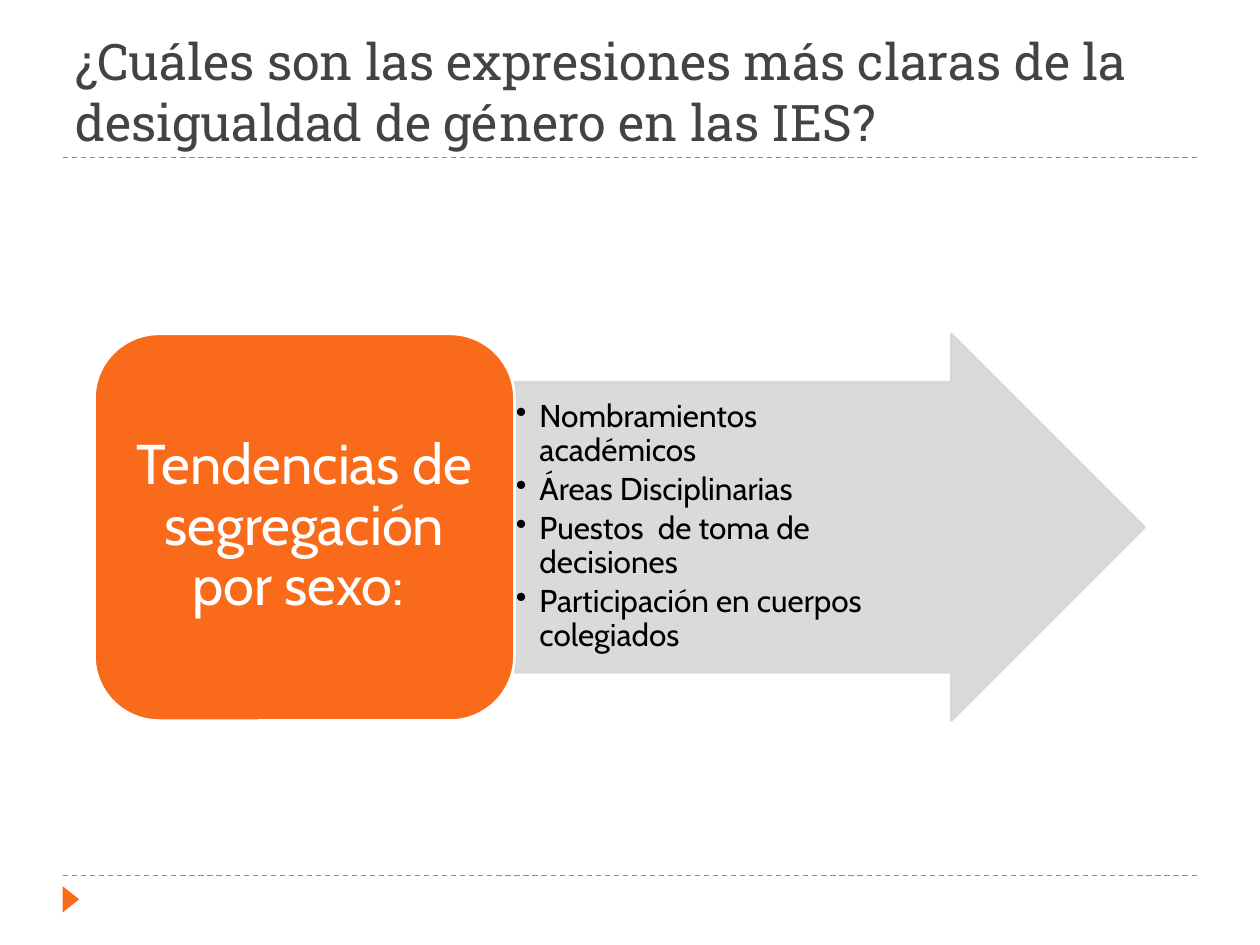
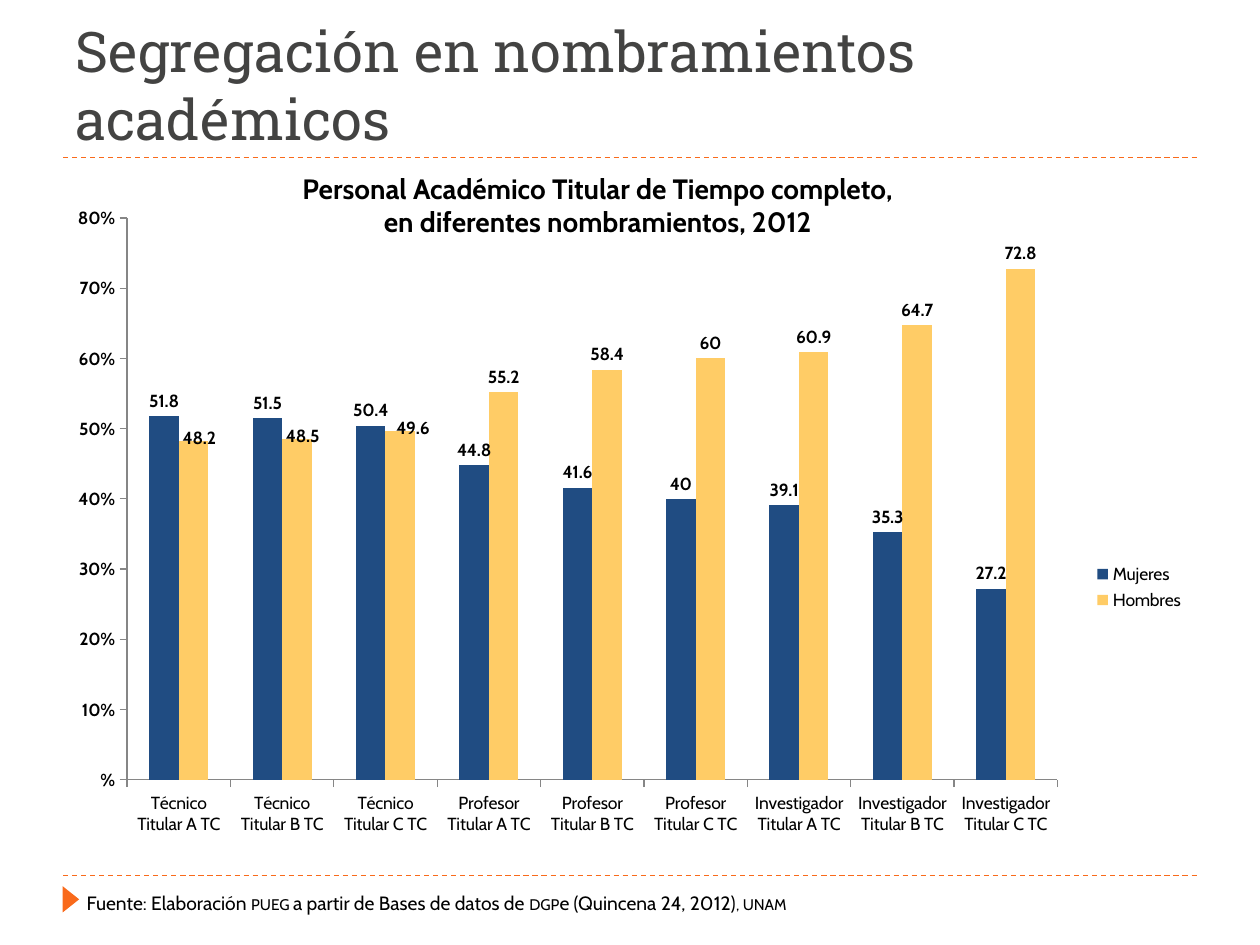
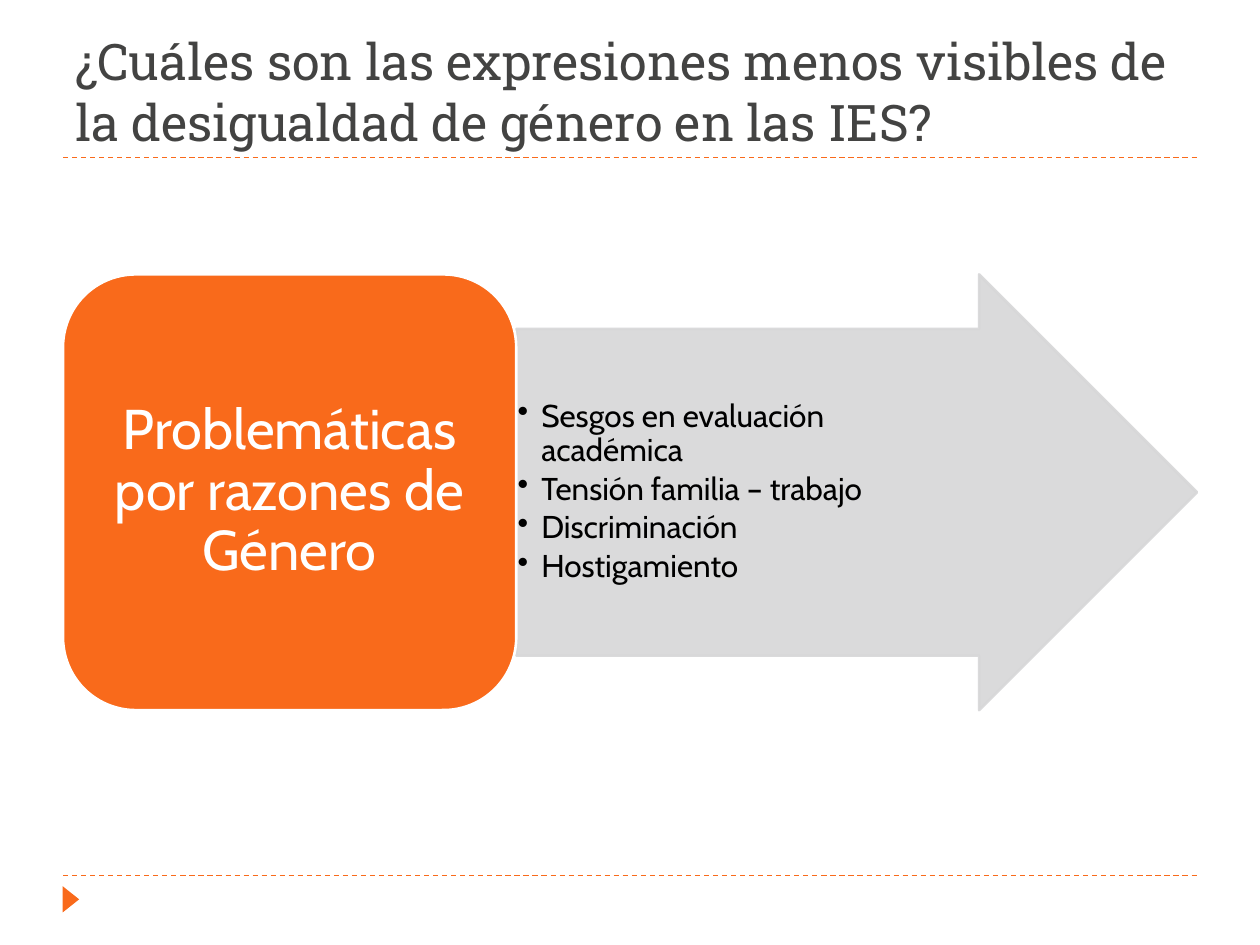
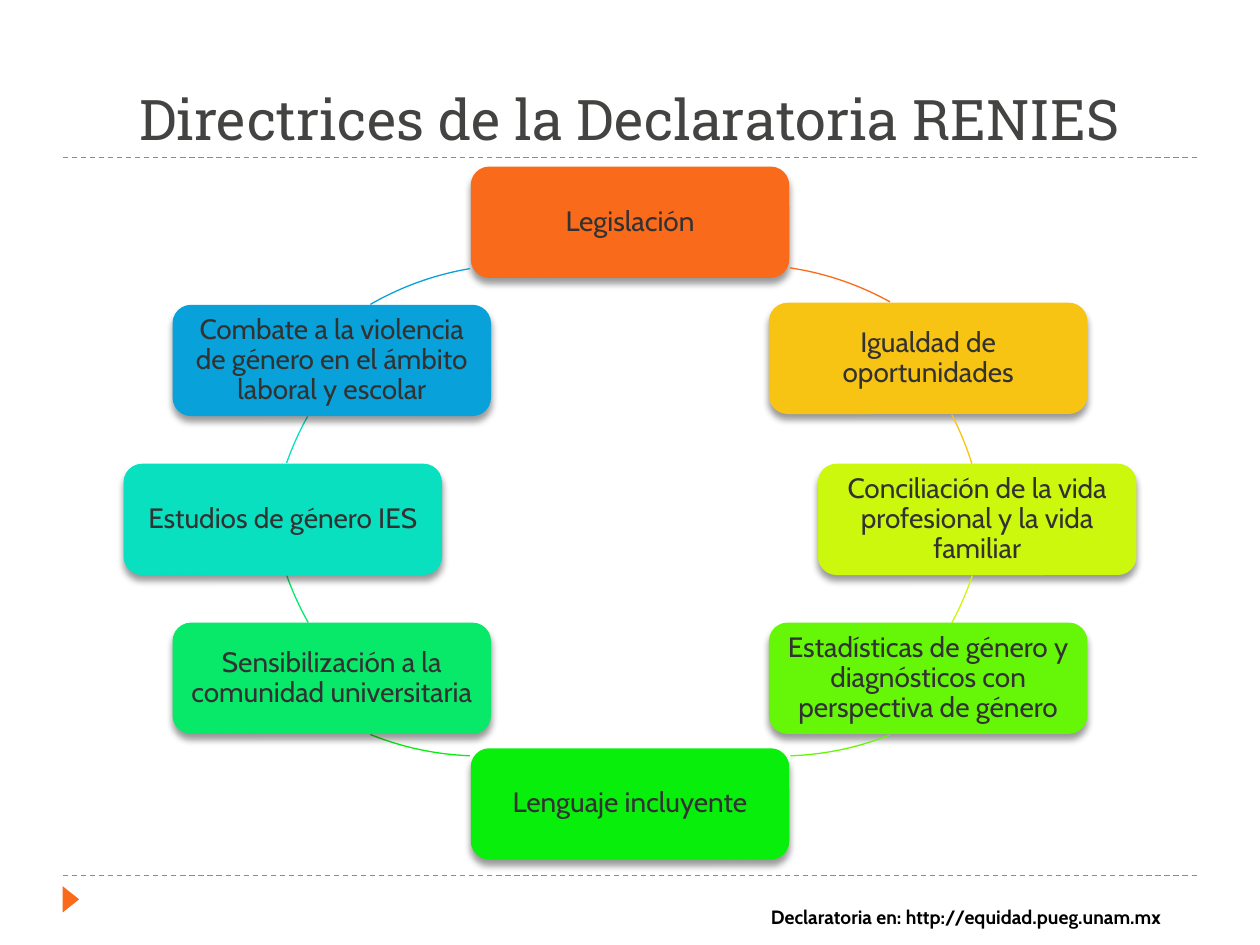
from dataclasses import dataclass

from lxml import etree
from pptx import Presentation
from pptx.chart.data import CategoryChartData
from pptx.dml.color import RGBColor
from pptx.enum import chart as ch
from pptx.enum import dml, shapes, text
from pptx.oxml import parse_xml
from pptx.oxml.ns import nsdecls, qn
from pptx.util import Pt

BODY, HEAD = "Cabin", "Roboto Slab"
ORANGE, GREY, WHITE, BLACK = "F96A1B", "D7D7D8", "FFFFFF", "000000"
TITLE_INK, NODE_INK, AXIS = "434342", "323232", "868686"
BLUE, YELLOW = "204C82", "FFCC66"
CENTER = text.PP_ALIGN.CENTER
MIDDLE, BOTTOM = text.MSO_ANCHOR.MIDDLE, text.MSO_ANCHOR.BOTTOM
MSO = shapes.MSO_SHAPE


@dataclass
class Box:
    x: float
    y: float
    w: float
    h: float

    def emu(self) -> tuple:
        return Pt(self.x), Pt(self.y), Pt(self.w), Pt(self.h)


@dataclass
class Style:
    size: float
    color: str = BLACK
    font: str = BODY
    bold: bool = False
    align: object = None
    spacing: float = 1.0


@dataclass
class Topic:
    """A heading tile and the arrow that lists its points."""
    heading: str
    points: list
    tile: Box
    arrow: Box


@dataclass
class Guideline:
    """A node of the ring and the arc that leaves it clockwise."""
    label: str
    color: str
    dx: float
    y: float
    arc_x: float
    arc_y: float
    start: float
    end: float


TITLE = Style(32, TITLE_INK, HEAD)
LONG_TITLE = Style(28.8, TITLE_INK, HEAD)
CENTERED_TITLE = Style(32, TITLE_INK, HEAD, align=CENTER)
TILE = Style(32, WHITE, align=CENTER, spacing=0.9)
POINT = Style(18, spacing=0.9)
NODE = Style(16, NODE_INK, align=CENTER, spacing=0.9)
CHART_TITLE = Style(16, bold=True, align=CENTER)
SOURCE = Style(11)
LINK = Style(11, bold=True)

TOPICS = [
    Topic("Tendencias de segregación por sexo: ",
          ["Nombramientos académicos", "Áreas Disciplinarias",
           "Puestos  de toma de decisiones",
           "Participación en cuerpos colegiados"],
          Box(54, 190.8, 240, 221), Box(294, 190.8, 360, 221)),
    Topic("Problemáticas por razones de Género",
          ["Sesgos en evaluación académica", "Tensión familia – trabajo",
           "Discriminación", "Hostigamiento"],
          Box(36, 156.8, 259, 249), Box(295, 156.8, 389, 249)),
]

GUIDELINES = [
    Guideline("Legislación", ORANGE, 0, 95.2, 256.3, 151.2, 278.5, 299),
    Guideline("Igualdad de oportunidades", "F8C414",
              170.4, 173, 223.2, 145.4, 332.6, 342.8),
    Guideline("Conciliación de la vida profesional y la vida familiar", "CCF80E",
              198.4, 265, 224.6, 105.1, 18.5, 28.4),
    Guideline("Estadísticas de género y diagnósticos con perspectiva de género",
              "66F708", 170.4, 355.8, 275.8, 92.2, 68.3, 88),
    Guideline("Lenguaje incluyente", "08EF0C", 0, 427.6, 105.1, 92.2, 92.2, 111.9),
    Guideline("Sensibilización a la comunidad universitaria", "08E869",
              -170.4, 355.8, 154.1, 102.2, 150.5, 160.4),
    Guideline("Estudios de género IES", "08E0C0",
              -198.4, 265, 154.1, 151.2, 199.4, 209.3),
    Guideline("Combate a la violencia de género en el ámbito laboral y escolar",
              "08A1D9", -170.4, 174.2, 126.7, 151.2, 240, 260.5),
]
NODE_W, NODE_H, RING = 182, 63.6, 339.8

CATEGORIES = [f"{job} Titular {level} TC"
              for job in ("Técnico", "Profesor", "Investigador") for level in "ABC"]
WOMEN = [51.8, 51.5, 50.4, 44.8, 41.6, 40, 39.1, 35.3, 27.2]
MEN = [48.2, 48.5, 49.6, 55.2, 58.4, 60, 60.9, 64.7, 72.8]
LABEL_SHIFTS = [(0.005, 0.015), (0.005, 0.015), (0.011, 0.015)]


def rgb(color: str) -> RGBColor:
    return RGBColor.from_string(color)


def style_font(font, st: Style) -> None:
    font.name, font.size, font.bold = st.font, Pt(st.size), st.bold
    font.color.rgb = rgb(st.color)


def write(sp, lines: list, st: Style, anchor=None, insets=(7.2, 3.6, 7.2, 3.6)) -> None:
    tf = sp.text_frame
    tf.text = "\n".join(lines)
    tf.word_wrap = True
    tf.vertical_anchor = anchor
    tf.margin_left, tf.margin_top, tf.margin_right, tf.margin_bottom = map(Pt, insets)
    for p in tf.paragraphs:
        p.alignment = st.align or text.PP_ALIGN.LEFT
        p.line_spacing = st.spacing
        for r in p.runs:
            style_font(r.font, st)


def add_text(s, box: Box, lines: list, st: Style, anchor=None):
    sp = s.shapes.add_textbox(*box.emu())
    write(sp, lines, st, anchor)
    return sp


def add_shape(s, kind, box: Box, fill: str = "", line: str = "", width: float = 1.5):
    sp = s.shapes.add_shape(kind, *box.emu())
    sp.shadow.inherit = False
    if fill:
        sp.fill.solid()
        sp.fill.fore_color.rgb = rgb(fill)
    else:
        sp.fill.background()
    if line:
        sp.line.color.rgb = rgb(line)
        sp.line.width = Pt(width)
    else:
        sp.line.fill.background()
    return sp


def add_rule(s, y: float) -> None:
    cn = s.shapes.add_connector(shapes.MSO_CONNECTOR.STRAIGHT,
                                Pt(36), Pt(y), Pt(684), Pt(y))
    cn.line.color.rgb = rgb(ORANGE)
    cn.line.width = Pt(0.75)
    cn.line.dash_style = dml.MSO_LINE.DASH
    etree.SubElement(cn._element.spPr, qn("a:effectLst"))


def add_slide(prs, title: str, st: Style):
    """Add a slide with its rules, corner marker and title."""
    s = prs.slides.add_slide(prs.slide_layouts[6])
    add_rule(s, 500.4)
    add_rule(s, 90)
    add_shape(s, MSO.ISOSCELES_TRIANGLE, Box(33, 509.2, 15, 9.4), ORANGE).rotation = 90
    add_text(s, Box(36, 12.2, 648, 77.8), [title], st, BOTTOM)
    return s


def make_translucent(sp, percent: int) -> None:
    for clr in sp._element.spPr.iter(qn("a:srgbClr")):
        etree.SubElement(clr, qn("a:alpha")).set("val", str(percent * 1000))


def add_bullet(p, indent: float) -> None:
    pPr = p._p.get_or_add_pPr()
    pPr.set("marL", str(Pt(indent)))
    pPr.set("indent", str(-Pt(indent)))
    etree.SubElement(pPr, qn("a:buChar")).set("char", "•")


def add_topic(s, topic: Topic) -> None:
    arrow = add_shape(s, MSO.RIGHT_ARROW, topic.arrow, GREY, GREY)
    arrow.adjustments[0], arrow.adjustments[1] = 0.75, 0.5
    make_translucent(arrow, 90)
    write(arrow, topic.points, POINT, MIDDLE, (0.8, 0.8, topic.arrow.h / 4, 0.8))
    for p in arrow.text_frame.paragraphs:
        p.space_after = Pt(2.8)
        add_bullet(p, 13.5)
    tile = add_shape(s, MSO.ROUNDED_RECTANGLE, topic.tile, ORANGE, WHITE)
    write(tile, [topic.heading], TILE, MIDDLE, (9.6, 4.8, 9.6, 4.8))


def drop_shadow(sp) -> None:
    sp._element.spPr.find(qn("a:effectLst")).append(parse_xml(
        f'<a:outerShdw {nsdecls("a")} blurRad="{Pt(4)}" dist="{Pt(3.4)}" dir="5400000" '
        'rotWithShape="0"><a:srgbClr val="000000"><a:alpha val="40000"/></a:srgbClr>'
        '</a:outerShdw>'))


def add_guideline(s, g: Guideline) -> None:
    box = Box(360 + g.dx - NODE_W / 2, g.y, NODE_W, NODE_H)
    node = add_shape(s, MSO.ROUNDED_RECTANGLE, box, g.color)
    drop_shadow(node)
    write(node, [g.label], NODE, MIDDLE, (4.8,) * 4)
    arc = add_shape(s, MSO.ARC, Box(g.arc_x, g.arc_y, RING, RING), line=g.color, width=0.75)
    # Arc angles are stored in 1/60000 degree, adjustments in 1/100000
    arc.adjustments[0], arc.adjustments[1] = g.start * 0.6, g.end * 0.6


def add_layout(parent, index: int, **values) -> None:
    """Insert a manual chart layout as the given child of parent."""
    items = "".join(f'<c:{k} val="{v}"/>' for k, v in values.items())
    for old in parent.findall(qn("c:layout")):
        parent.remove(old)
    parent.insert(index, parse_xml(
        f'<c:layout {nsdecls("c")}><c:manualLayout>{items}</c:manualLayout></c:layout>'))


def style_axis(axis, bold: bool) -> None:
    axis.has_major_gridlines = False
    axis.major_tick_mark = ch.XL_TICK_MARK.OUTSIDE
    axis.minor_tick_mark = ch.XL_TICK_MARK.NONE
    axis.format.line.color.rgb = rgb(AXIS)
    style_font(axis.tick_labels.font, Style(10, bold=bold))


def style_series(ser, color: str) -> None:
    ser.format.fill.solid()
    ser.format.fill.fore_color.rgb = rgb(color)
    ser.invert_if_negative = False
    labels = ser.data_labels
    labels.show_value = True
    labels.position = ch.XL_LABEL_POSITION.OUTSIDE_END
    style_font(labels.font, Style(10, bold=True))


def shift_labels(ser) -> None:
    for i in range(len(LABEL_SHIFTS)):
        label = ser.points[i].data_label
        style_font(label.font, Style(10, bold=True))
        label.position = ch.XL_LABEL_POSITION.OUTSIDE_END
    for dLbl, (x, y) in zip(ser._element.iter(qn("c:dLbl")), LABEL_SHIFTS):
        add_layout(dLbl, 1, x=x, y=y)


def add_staff_chart(s) -> None:
    data = CategoryChartData()
    data.categories = CATEGORIES
    data.add_series("Mujeres", WOMEN)
    data.add_series("Hombres", MEN)
    chart = s.shapes.add_chart(ch.XL_CHART_TYPE.COLUMN_CLUSTERED,
                               *Box(25.2, 111.6, 658.8, 447.8).emu(), data).chart
    style_font(chart.font, Style(10))
    chart.has_title = False
    chart.has_legend = True
    chart.legend.position = ch.XL_LEGEND_POSITION.RIGHT
    chart.legend.include_in_layout = False
    plot = chart.plots[0]
    plot.gap_width, plot.overlap, plot.vary_by_categories = 150, 0, False
    style_axis(chart.category_axis, False)
    axis = chart.value_axis
    style_axis(axis, True)
    axis.minimum_scale, axis.maximum_scale, axis.major_unit = 0, 80, 10
    axis.tick_labels.number_format = r"#\%"
    axis.tick_labels.number_format_is_linked = False
    for ser, color in zip(plot.series, (BLUE, YELLOW)):
        style_series(ser, color)
    shift_labels(plot.series[1])
    add_layout(chart._chartSpace.chart.plotArea, 0, layoutTarget="inner",
               xMode="edge", yMode="edge", x=0.072, y=0.029, w=0.807, h=0.717)


def add_source(s) -> None:
    """Add the source line, whose acronyms are set in small capitals."""
    parts = ["Fuente: Elaboración ", "pueg ", "a partir de Bases de datos de ", "dgp",
             "e (Quincena 24, 2012)", ", unam"]
    p = add_text(s, Box(42.5, 505.5, 487.4, 20.9), [""], SOURCE).text_frame.paragraphs[0]
    for i, part in enumerate(parts):
        r = p.add_run()
        r.text = part
        style_font(r.font, SOURCE)
        if i % 2:
            r._r.get_or_add_rPr().set("cap", "small")


def main() -> None:
    prs = Presentation()
    prs.slide_width, prs.slide_height = Pt(720), Pt(540)

    s = add_slide(prs, "¿Cuáles son las expresiones más claras de la desigualdad "
                  "de género en las IES?", LONG_TITLE)
    add_topic(s, TOPICS[0])

    s = add_slide(prs, "Segregación en nombramientos académicos", TITLE)
    add_source(s)
    add_staff_chart(s)
    heading = add_text(s, Box(145.4, 94.3, 392.4, 46),
                       ["Personal Académico Titular de Tiempo completo,",
                        "en diferentes nombramientos, 2012"], CHART_TITLE)
    heading.text_frame.word_wrap = False

    s = add_slide(prs, "¿Cuáles son las expresiones menos visibles de la desigualdad "
                  "de género en las IES?", LONG_TITLE)
    add_topic(s, TOPICS[1])

    s = add_slide(prs, "Directrices de la Declaratoria RENIES", CENTERED_TITLE)
    for g in GUIDELINES:
        add_guideline(s, g)
    add_text(s, Box(433.4, 514, 257.8, 20.9),
             ["Declaratoria en: http://equidad.pueg.unam.mx"], LINK)

    prs.save("out.pptx")


if __name__ == "__main__":
    main()
